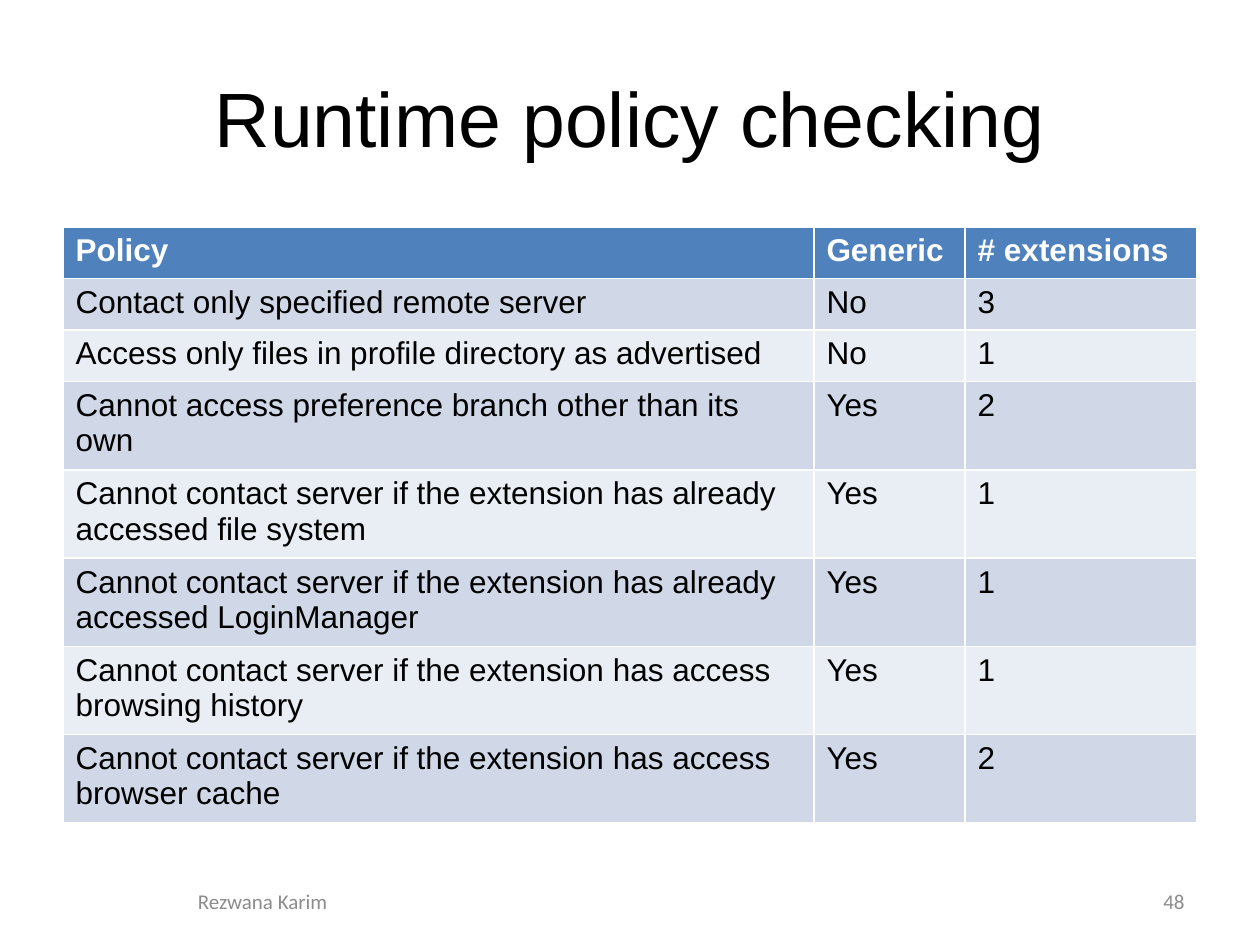
from pptx import Presentation
from pptx.dml.color import RGBColor
from pptx.enum.text import MSO_ANCHOR, PP_ALIGN
from pptx.util import Inches, Pt

COLORS = {
    "text": "000000",
    "header_text": "FFFFFF",
    "footer": "8C8C8C",
    "header": "4F81BD",
    "band_dark": "D0D8E8",
    "band_light": "E9EDF4",
}


def write(tf, text, size=18, font="Arial", color="text", bold=False,
          align=PP_ALIGN.LEFT):
    p = tf.paragraphs[0]
    p.alignment = align
    r = p.add_run()
    r.text = text
    r.font.size = Pt(size)
    r.font.name = font
    r.font.bold = bold
    r.font.color.rgb = RGBColor.from_string(COLORS[color])


prs = Presentation()
prs.slide_width, prs.slide_height = Inches(10), Inches(7.5)
s = prs.slides.add_slide(prs.slide_layouts[6])

# Title and footer texts
footer = {"size": 12, "font": "Calibri", "color": "footer"}
texts = [
    ("Runtime policy checking", (0.5, 0.3, 9, 1.25),
     {"size": 44, "align": PP_ALIGN.CENTER}),
    ("48", (7.17, 6.95, 2.33, 0.4), {**footer, "align": PP_ALIGN.RIGHT}),
    ("Rezwana Karim", (0.5, 6.95, 3.17, 0.4),
     {**footer, "align": PP_ALIGN.CENTER}),
]
for text, box, style in texts:
    tf = s.shapes.add_textbox(*[Inches(v) for v in box]).text_frame
    tf.word_wrap = True
    tf.vertical_anchor = MSO_ANCHOR.MIDDLE
    write(tf, text, **style)

# Policy table: the default style supplies the white borders
ONE_LINE, TWO_LINES = 0.41, 0.66
rows = [
    (ONE_LINE, "Policy", "Generic", "# extensions"),
    (ONE_LINE, "Contact only specified remote server", "No", "3"),
    (ONE_LINE, "Access only files in profile directory as advertised",
     "No", "1"),
    (TWO_LINES, "Cannot access preference branch other than its own",
     "Yes", "2"),
    (TWO_LINES, "Cannot contact server if the extension has already "
     "accessed file system", "Yes", "1"),
    (TWO_LINES, "Cannot contact server if the extension has already "
     "accessed LoginManager", "Yes", "1"),
    (TWO_LINES, "Cannot contact server if the extension has access "
     "browsing history", "Yes", "1"),
    (TWO_LINES, "Cannot contact server if the extension has access "
     "browser cache", "Yes", "2"),
]
widths = [5.96, 1.2, 1.84]
table_height = sum(row[0] for row in rows)
table = s.shapes.add_table(len(rows), len(widths), Inches(0.5), Inches(1.8),
                           Inches(sum(widths)), Inches(table_height)).table
for column, width in zip(table.columns, widths):
    column.width = Inches(width)

for i, (height, *values) in enumerate(rows):
    table.rows[i].height = Inches(height)
    is_header = i == 0
    band = "band_dark" if i % 2 else "band_light"
    for j, value in enumerate(values):
        cell = table.cell(i, j)
        cell.fill.solid()
        cell.fill.fore_color.rgb = RGBColor.from_string(
            COLORS["header" if is_header else band])
        write(cell.text_frame, value, bold=is_header,
              color="header_text" if is_header else "text")

prs.save("out.pptx")
